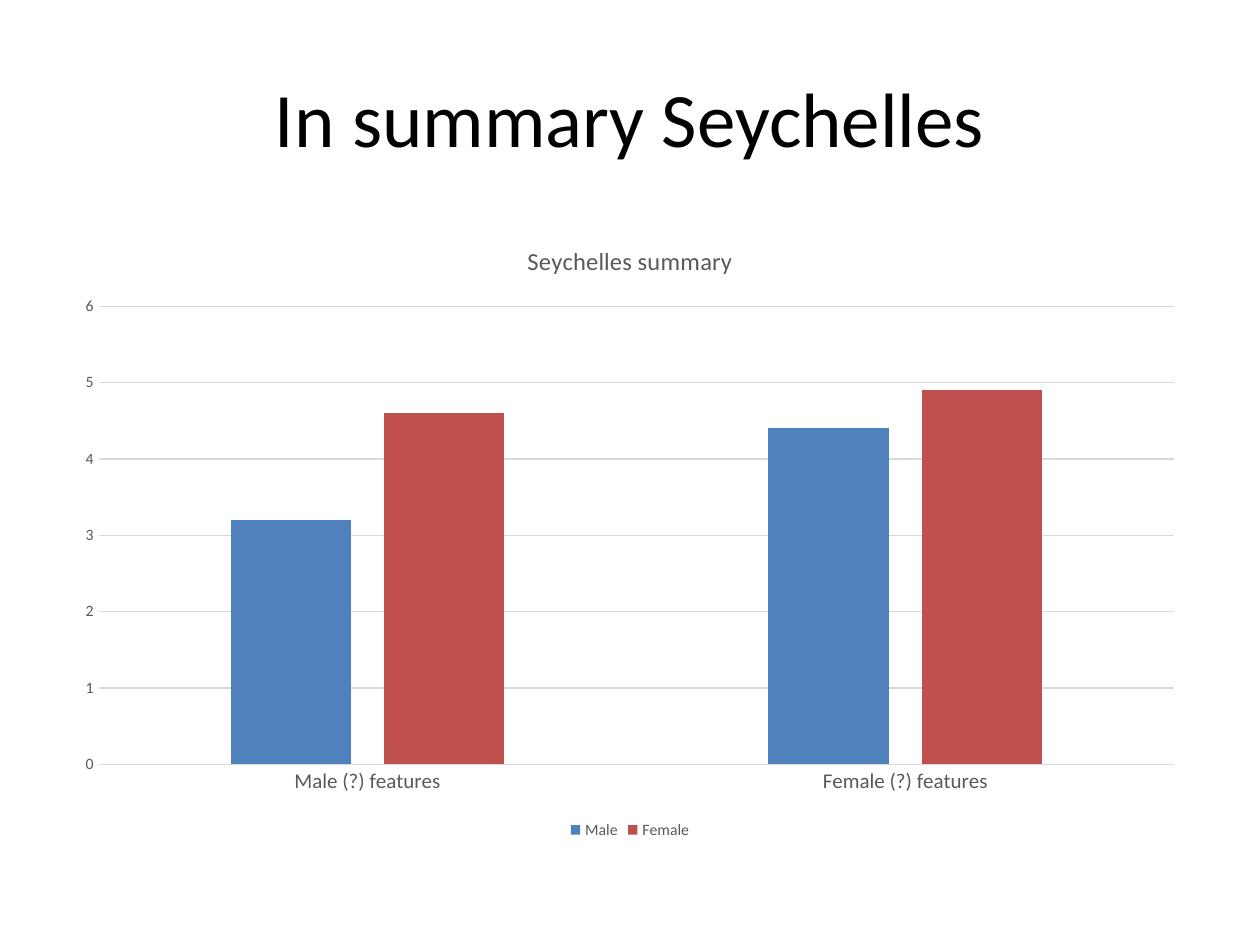
from dataclasses import dataclass

from pptx import Presentation
from pptx.chart import data as chart_data
from pptx.dml.color import RGBColor
from pptx.enum import chart as chart_enum
from pptx.enum import text
from pptx import util as u


@dataclass(frozen=True)
class Theme:
    font: str = "Calibri"
    ink: str = "000000"
    label: str = "595959"
    rule: str = "D9D9D9"
    heading_size: float = 44
    chart_title_size: float = 14
    category_size: float = 12
    chart_size: float = 10
    small_size: float = 9
    rule_width: float = 0.75


@dataclass(frozen=True)
class Area:
    left: float
    top: float
    width: float
    height: float

    def lengths(self) -> tuple:
        return tuple(u.Inches(v) for v in (self.left, self.top, self.width, self.height))


@dataclass(frozen=True)
class Group:
    name: str
    values: tuple[float, ...]
    color: str


THEME = Theme()
CATEGORIES = ("Male (?) features", "Female (?) features")
GROUPS = (
    Group("Male", (3.2, 4.4), "4F81BD"),
    Group("Female", (4.6, 4.9), "C0504D"),
)


def style_font(font, size: float, color: str) -> None:
    font.name = THEME.font
    font.size = u.Pt(size)
    font.bold = False
    font.color.rgb = RGBColor.from_string(color)


def style_rule(line) -> None:
    line.color.rgb = RGBColor.from_string(THEME.rule)
    line.width = u.Pt(THEME.rule_width)


def style_axis(axis, size: float) -> None:
    axis.major_tick_mark = chart_enum.XL_TICK_MARK.NONE
    axis.minor_tick_mark = chart_enum.XL_TICK_MARK.NONE
    style_font(axis.tick_labels.font, size, THEME.label)


def add_heading(page, area: Area, wording: str) -> None:
    frame = page.shapes.add_textbox(*area.lengths()).text_frame
    frame.word_wrap = True
    frame.vertical_anchor = text.MSO_ANCHOR.MIDDLE
    frame.text = wording
    para = frame.paragraphs[0]
    para.alignment = text.PP_ALIGN.CENTER
    style_font(para.runs[0].font, THEME.heading_size, THEME.ink)


def add_summary_chart(page, area: Area, title: str) -> None:
    data = chart_data.CategoryChartData()
    data.categories = CATEGORIES
    for group in GROUPS:
        data.add_series(group.name, group.values)
    chart = page.shapes.add_chart(
        chart_enum.XL_CHART_TYPE.COLUMN_CLUSTERED, *area.lengths(), data
    ).chart
    style_font(chart.font, THEME.chart_size, THEME.ink)

    chart.has_title = True
    frame = chart.chart_title.text_frame
    frame.text = title
    style_font(frame.paragraphs[0].runs[0].font, THEME.chart_title_size, THEME.label)
    chart.chart_title.include_in_layout = False

    chart.has_legend = True
    chart.legend.position = chart_enum.XL_LEGEND_POSITION.BOTTOM
    chart.legend.include_in_layout = False
    style_font(chart.legend.font, THEME.small_size, THEME.label)

    style_axis(chart.category_axis, THEME.category_size)
    style_rule(chart.category_axis.format.line)
    style_axis(chart.value_axis, THEME.small_size)
    chart.value_axis.format.line.fill.background()
    chart.value_axis.minimum_scale = 0
    chart.value_axis.maximum_scale = 6
    chart.value_axis.major_unit = 1
    chart.value_axis.tick_labels.number_format = "General"
    chart.value_axis.tick_labels.number_format_is_linked = False
    style_rule(chart.value_axis.major_gridlines.format.line)

    plot = chart.plots[0]
    plot.gap_width = 219
    plot.overlap = -27
    plot.vary_by_categories = False
    for series, group in zip(plot.series, GROUPS):
        series.format.fill.solid()
        series.format.fill.fore_color.rgb = RGBColor.from_string(group.color)
        series.invert_if_negative = False


def main() -> None:
    deck = Presentation()
    deck.slide_width, deck.slide_height = u.Inches(10), u.Inches(7.5)
    page = deck.slides.add_slide(deck.slide_layouts[6])
    add_heading(page, Area(0.5, 0.3, 9, 1.25), "In summary Seychelles")
    add_summary_chart(page, Area(0.5, 1.75, 9, 4.95), "Seychelles summary")
    deck.save("out.pptx")


if __name__ == "__main__":
    main()
